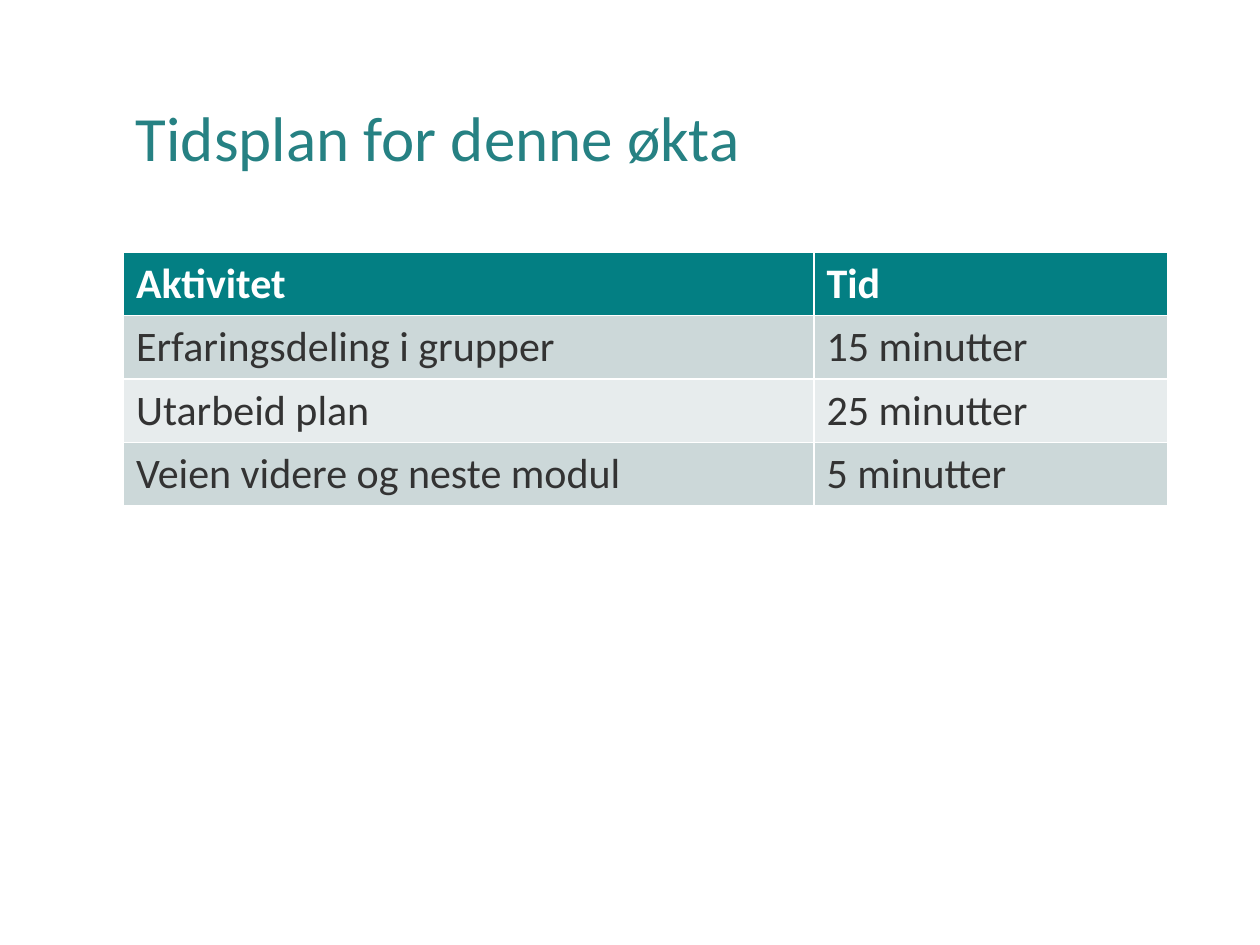
from typing import NamedTuple

from pptx import Presentation
from pptx.dml.color import RGBColor
from pptx.enum.text import MSO_ANCHOR
from pptx.util import Cm, Pt

FONT = "Calibri"
TITLE_TEAL = RGBColor(0x26, 0x81, 0x83)
HEADER_TEAL = RGBColor(0x03, 0x7F, 0x83)
BAND_DARK = RGBColor(0xCC, 0xD8, 0xD9)
BAND_LIGHT = RGBColor(0xE7, 0xEC, 0xED)
TEXT_GREY = RGBColor(0x33, 0x33, 0x33)
WHITE = RGBColor(0xFF, 0xFF, 0xFF)

LEFT, WIDTH = Cm(2.49), Cm(21.06)
COLUMN_WIDTHS = Cm(13.92), Cm(7.14)
ROW_HEIGHT = Cm(1.28)


class Activity(NamedTuple):
    name: str
    time: str


HEADER = Activity("Aktivitet", "Tid")
ACTIVITIES = [
    Activity("Erfaringsdeling i grupper", "15 minutter"),
    Activity("Utarbeid plan", "25 minutter"),
    Activity("Veien videre og neste modul", "5 minutter"),
]


def style_paragraph(p, size: int, color: RGBColor, bold: bool = False) -> None:
    p.font.name = FONT
    p.font.size = Pt(size)
    p.font.bold = bold
    p.font.color.rgb = color


def add_title(slide, text: str) -> None:
    tf = slide.shapes.add_textbox(LEFT, Cm(1.01), WIDTH, Cm(3.68)).text_frame
    tf.word_wrap = True
    tf.vertical_anchor = MSO_ANCHOR.MIDDLE
    p = tf.paragraphs[0]
    p.text = text
    p.line_spacing = 0.9
    style_paragraph(p, 36, TITLE_TEAL)


def fill_row(row, activity: Activity, fill: RGBColor, color: RGBColor, bold: bool) -> None:
    row.height = ROW_HEIGHT
    for cell, text in zip(row.cells, activity):
        cell.fill.solid()
        cell.fill.fore_color.rgb = fill
        cell.text = text
        style_paragraph(cell.text_frame.paragraphs[0], 24, color, bold)


def add_schedule(slide, header: Activity, activities: list[Activity]) -> None:
    count = len(activities) + 1
    table = slide.shapes.add_table(
        count, len(header), LEFT, Cm(5.08), WIDTH, ROW_HEIGHT * count
    ).table
    for column, width in zip(table.columns, COLUMN_WIDTHS):
        column.width = width
    fill_row(table.rows[0], header, HEADER_TEAL, WHITE, True)
    for i, activity in enumerate(activities):
        band = BAND_LIGHT if i % 2 else BAND_DARK
        fill_row(table.rows[i + 1], activity, band, TEXT_GREY, False)


def main() -> None:
    prs = Presentation()
    prs.slide_width, prs.slide_height = Cm(25.4), Cm(19.05)
    slide = prs.slides.add_slide(prs.slide_layouts[6])
    add_title(slide, "Tidsplan for denne økta")
    add_schedule(slide, HEADER, ACTIVITIES)
    prs.save("out.pptx")


if __name__ == "__main__":
    main()
